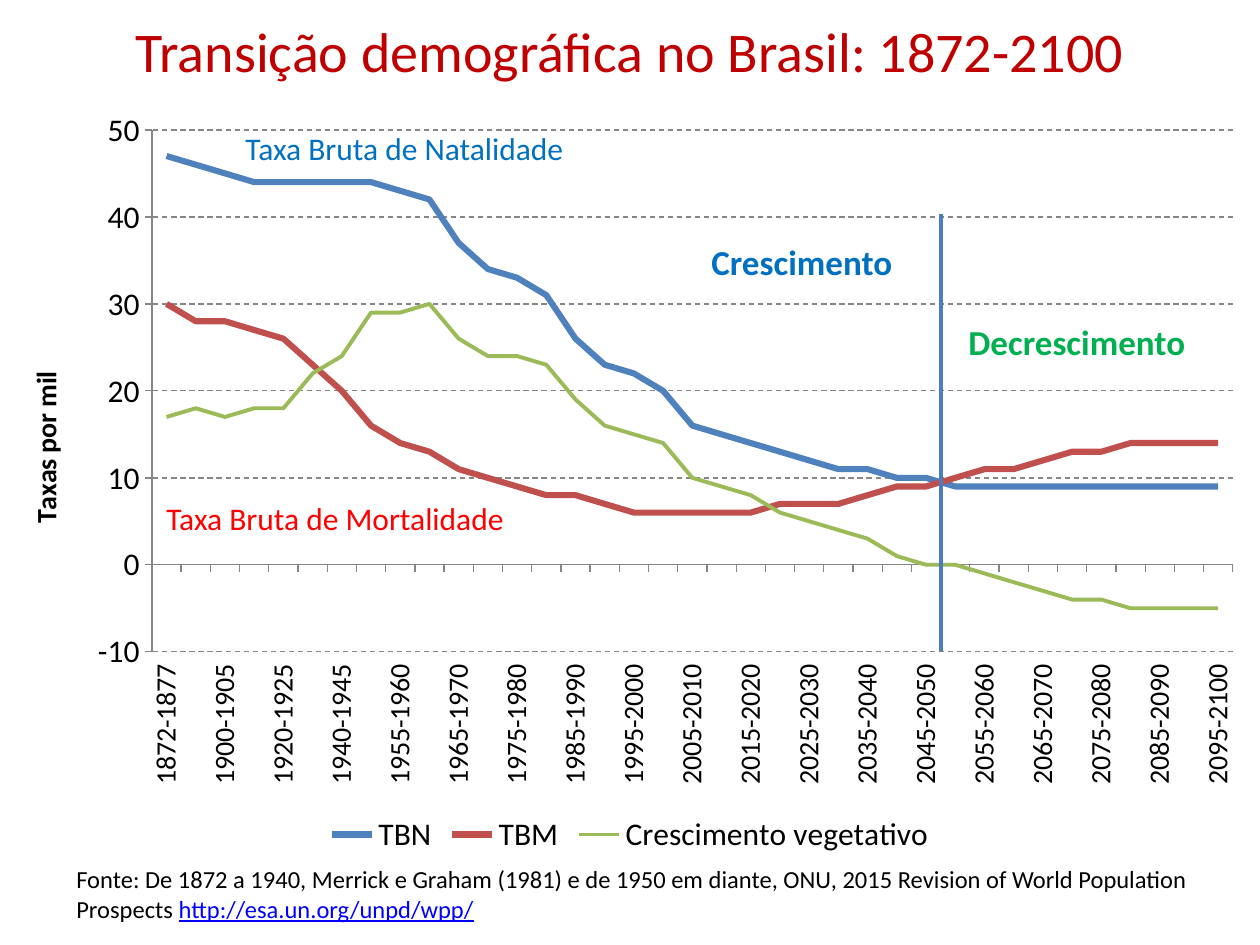
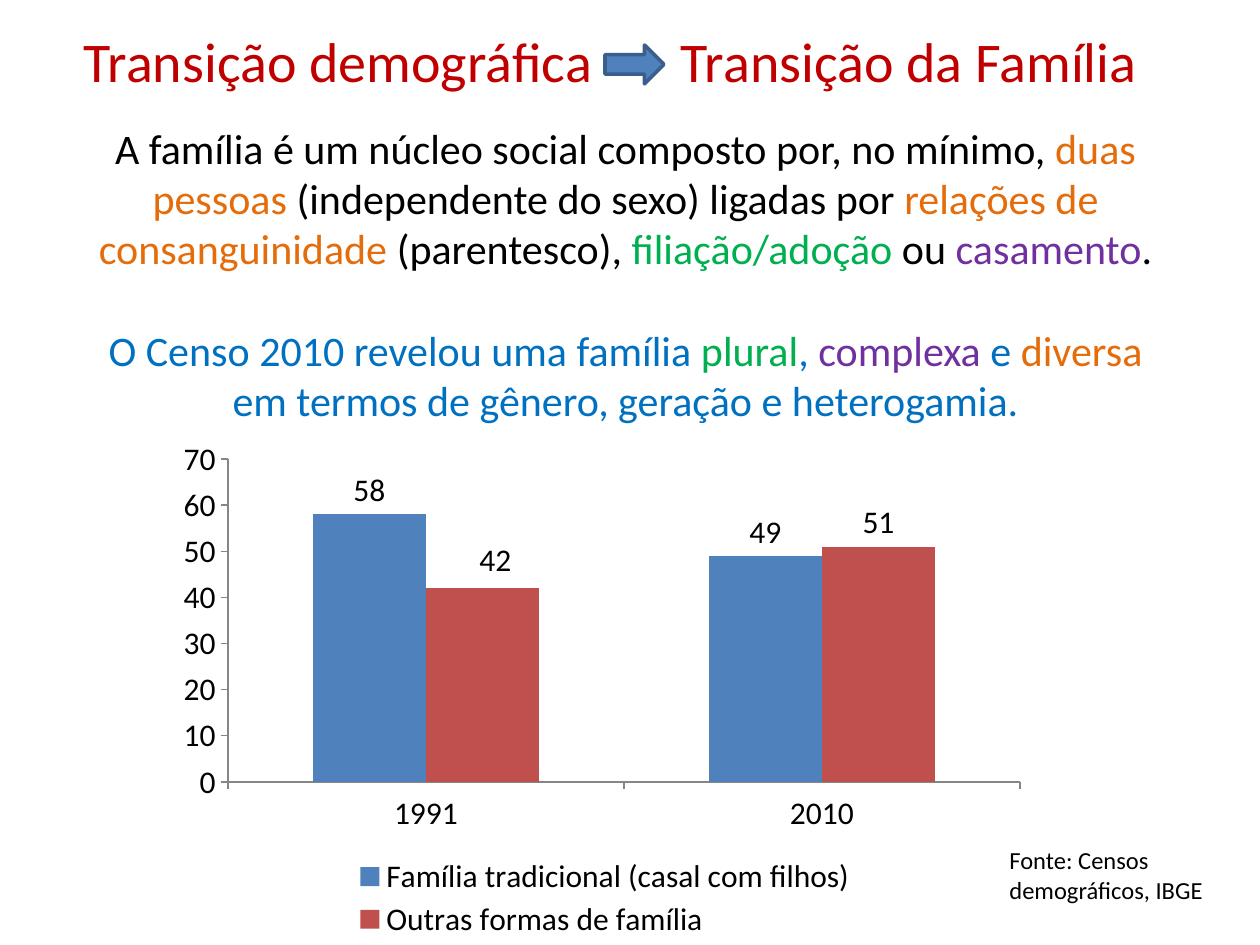
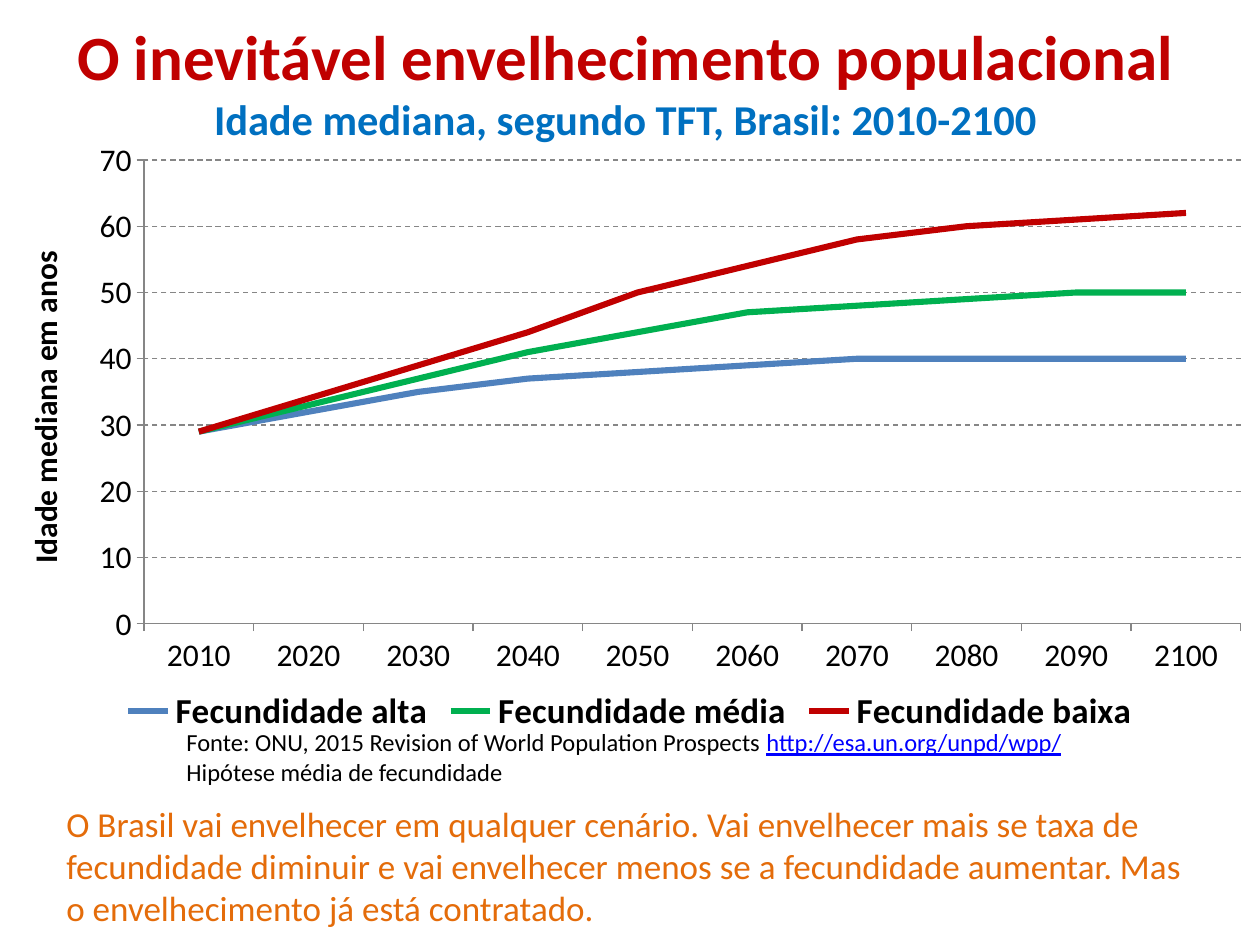
from lxml.etree import SubElement
from pptx import Presentation
from pptx.chart.data import CategoryChartData
from pptx.dml.color import RGBColor
from pptx.enum.chart import XL_CHART_TYPE, XL_LABEL_POSITION, XL_LEGEND_POSITION
from pptx.enum.chart import XL_TICK_LABEL_POSITION, XL_TICK_MARK
from pptx.enum.dml import MSO_LINE
from pptx.enum.shapes import MSO_CONNECTOR, MSO_SHAPE
from pptx.enum.text import MSO_ANCHOR, MSO_AUTO_SIZE, PP_ALIGN
from pptx.oxml import parse_xml
from pptx.oxml.ns import nsdecls, qn
from pptx.util import Emu, Pt

PX_PER_INCH = 126
FONT = "Calibri"
BLACK, RED, BLUE, GREEN = "000000", "C00000", "0070C0", "00B050"
ORANGE, PURPLE, LINK, GREY = "E46C0A", "7030A0", "0000FF", "868686"
SERIES_BLUE, SERIES_RED, SERIES_GREEN = "4F81BD", "C0504D", "9BBB59"
TITLE_SIZE, SOURCE_SIZE = 32, 14
SOURCE_URL = ("http://esa.un.org/unpd/wpp/", SOURCE_SIZE, LINK, "u")

PERIODS = ["1872-1877", "1890-1895", "1900-1905", "1910-1915", "1920-1925",
           "1930-1935", "1940-1945"]
PERIODS += [f"{year}-{year + 5}" for year in range(1950, 2100, 5)]
BIRTHS = [47, 46, 45, 44, 44, 44, 44, 44, 43, 42, 37, 34, 33, 31, 26, 23, 22, 20, 16,
          15, 14, 13, 12, 11, 11, 10, 10, 9, 9, 9, 9, 9, 9, 9, 9, 9, 9]
DEATHS = [30, 28, 28, 27, 26, 23, 20, 16, 14, 13, 11, 10, 9, 8, 8, 7, 6, 6, 6,
          6, 6, 7, 7, 7, 8, 9, 9, 10, 11, 11, 12, 13, 13, 14, 14, 14, 14]
GROWTH = [17, 18, 17, 18, 18, 22, 24, 29, 29, 30, 26, 24, 24, 23, 19, 16, 15, 14, 10,
          9, 8, 6, 5, 4, 3, 1, 0, 0, -1, -2, -3, -4, -4, -5, -5, -5, -5]


def px(length):
    """Turn a length in px into EMU."""
    return Emu(round(length * 914400 / PX_PER_INCH))


def rgb(colour):
    """Turn a hex string into a colour."""
    return RGBColor.from_string(colour)


def style_font(font, size, colour=BLACK, bold=False):
    """Give a font the deck's typeface with a size, colour and weight."""
    font.name, font.size, font.bold = FONT, Pt(size), bold
    font.color.rgb = rgb(colour)


def write(frame, paragraphs, align=PP_ALIGN.LEFT):
    """Fill a text frame with paragraphs of (text, size, colour, marks) runs."""
    for index, runs in enumerate(paragraphs):
        paragraph = frame.add_paragraph() if index else frame.paragraphs[0]
        paragraph.alignment = align
        for text, size, colour, *marks in runs:
            run = paragraph.add_run()
            run.text = text
            style_font(run.font, size, colour, "b" in marks)
            run.font.underline = "u" in marks


def add_slide(deck, box, paragraphs):
    """Add a title-only slide with its title placed and written."""
    slide = deck.slides.add_slide(deck.slide_layouts[5])
    heading = slide.shapes.title
    heading.left, heading.top, heading.width, heading.height = map(px, box)
    frame = heading.text_frame
    frame.auto_size, frame.vertical_anchor = MSO_AUTO_SIZE.NONE, MSO_ANCHOR.MIDDLE
    write(frame, paragraphs, PP_ALIGN.CENTER)
    return slide


def add_text(slide, box, paragraphs, wrap=True):
    """Add a text box that grows with its text."""
    frame = slide.shapes.add_textbox(*map(px, box)).text_frame
    frame.word_wrap = wrap
    frame.auto_size = MSO_AUTO_SIZE.SHAPE_TO_FIT_TEXT
    write(frame, paragraphs)
    return frame


def set_layout(parent, position, inner=False, **fractions):
    """Place a chart part by fractions of the chart's size."""
    for old in parent.findall(qn("c:layout")):
        parent.remove(old)
    target = '<c:layoutTarget val="inner"/>' if inner else ""
    modes = '<c:xMode val="edge"/><c:yMode val="edge"/>' if "w" in fractions else ""
    values = "".join(f'<c:{key} val="{value:.4f}"/>' for key, value in fractions.items())
    parent.insert(position, parse_xml(
        f'<c:layout {nsdecls("c")}><c:manualLayout>{target}{modes}{values}'
        "</c:manualLayout></c:layout>"))


def fractions_of(part, frame):
    """Express a slide box as fractions of a chart's box."""
    return {"x": (part[0] - frame[0]) / frame[2], "y": (part[1] - frame[1]) / frame[3],
            "w": part[2] / frame[2], "h": part[3] / frame[3]}


def style_axis(axis, size):
    """Give an axis its font, grey line and outside ticks."""
    style_font(axis.tick_labels.font, size)
    axis.major_tick_mark, axis.minor_tick_mark = XL_TICK_MARK.OUTSIDE, XL_TICK_MARK.NONE
    axis.format.line.color.rgb = rgb(GREY)
    axis.format.line.width = Pt(0.75)
    axis.has_major_gridlines = False


def add_chart(slide, kind, box, plot_box, categories, series, limits,
              category_size=18, legend_size=18, legend_bold=False):
    """Add a chart with its axes, plot area and bottom legend."""
    data = CategoryChartData()
    data.categories = categories
    for name, values, *_ in series:
        data.add_series(name, values)
    chart = slide.shapes.add_chart(kind, *map(px, box), data).chart
    chart.has_title = False
    style_font(chart.font, 18)
    style_axis(chart.category_axis, category_size)
    style_axis(chart.value_axis, 18)
    scale = chart.value_axis
    scale.minimum_scale, scale.maximum_scale = limits
    scale.major_unit = 10
    chart.has_legend = True
    chart.legend.position = XL_LEGEND_POSITION.BOTTOM
    chart.legend.include_in_layout = False
    style_font(chart.legend.font, legend_size, bold=legend_bold)
    chart.plots[0].vary_by_categories = False
    plot_area = chart._chartSpace.xpath("c:chart/c:plotArea")[0]
    set_layout(plot_area, 0, inner=True, **fractions_of(plot_box, box))
    return chart


def add_line_chart(slide, box, plot_box, categories, series, limits,
                   axis_title, axis_title_size, **sizes):
    """Add a line chart with dashed gridlines and a titled value axis."""
    chart = add_chart(slide, XL_CHART_TYPE.LINE, box, plot_box, categories, series,
                      limits, **sizes)
    scale = chart.value_axis
    scale.has_major_gridlines = True
    gridline = scale.major_gridlines.format.line
    gridline.color.rgb = rgb(GREY)
    gridline.width, gridline.dash_style = Pt(0.75), MSO_LINE.DASH
    write(scale.axis_title.text_frame,
          [[(axis_title, axis_title_size, BLACK, "b")]], PP_ALIGN.CENTER)
    for curve, (_, _, colour, width) in zip(chart.plots[0].series, series):
        curve.smooth = False
        curve.format.line.color.rgb = rgb(colour)
        curve.format.line.width = Pt(width)
    return chart


def add_column_chart(slide, box, plot_box, legend_box, categories, series, limits):
    """Add a clustered column chart with values above the columns."""
    chart = add_chart(slide, XL_CHART_TYPE.COLUMN_CLUSTERED, box, plot_box,
                      categories, series, limits)
    chart.plots[0].gap_width, chart.plots[0].overlap = 150, 0
    set_layout(chart.legend._element, 1, **fractions_of(legend_box, box))
    for columns, (_, _, colour) in zip(chart.plots[0].series, series):
        columns.format.fill.solid()
        columns.format.fill.fore_color.rgb = rgb(colour)
        columns.data_labels.show_value = True
        columns.data_labels.position = XL_LABEL_POSITION.OUTSIDE_END
        style_font(columns.data_labels.font, 18)
    return chart


def nudge_label(point, box, right, down):
    """Move one value label off its usual place."""
    label = point.data_label
    style_font(label.font, 18)
    label.position = XL_LABEL_POSITION.OUTSIDE_END
    element = label._dLbl
    set_layout(element, 1, x=right / box[2], y=down / box[3])


def add_divider(slide, x, top, bottom):
    """Add the vertical line between growth and decline."""
    divider = slide.shapes.add_connector(
        MSO_CONNECTOR.STRAIGHT, px(x), px(bottom), px(x), px(top))
    divider.line.color.rgb = rgb("4B7EBC")
    divider.line.width = Pt(2)
    SubElement(divider._element.spPr, qn("a:effectLst"))


def add_arrow(slide, box):
    """Add the block arrow between the two transitions."""
    arrow = slide.shapes.add_shape(MSO_SHAPE.RIGHT_ARROW, *map(px, box))
    arrow.shadow.inherit = False
    arrow.fill.solid()
    arrow.fill.fore_color.rgb = rgb(SERIES_BLUE)
    arrow.line.color.rgb = rgb("3A5F8C")
    arrow.line.width = Pt(2)


def add_split_heading(slide, box, inset, tab, before, after):
    """Add a heading in two parts, the second at a tab stop."""
    frame = add_text(slide, box, [[(f"{before}\t{after}", TITLE_SIZE, RED)]])
    frame.auto_size, frame.vertical_anchor = MSO_AUTO_SIZE.NONE, MSO_ANCHOR.MIDDLE
    frame.margin_left = px(inset)
    stops = SubElement(frame.paragraphs[0]._p.get_or_add_pPr(), qn("a:tabLst"))
    SubElement(stops, qn("a:tab"), pos=str(px(tab)), algn="l")


def build_transition(deck):
    """Build the slide on birth, death and growth rates."""
    slide = add_slide(deck, (63, 16, 1134, 68),
                      [[("Transição demográfica no Brasil: 1872-2100", TITLE_SIZE, RED)]])
    rates = [("TBN", BIRTHS, SERIES_BLUE, 3.5), ("TBM", DEATHS, SERIES_RED, 3.5),
             ("Crescimento vegetativo", GROWTH, SERIES_GREEN, 2.25)]
    chart = add_line_chart(slide, (0, 96, 1260, 764), (152, 130, 1081, 522), PERIODS,
                           rates, (-10, 50), "Taxas por mil", 16, category_size=16)
    periods = chart.category_axis
    periods.tick_label_position = XL_TICK_LABEL_POSITION.LOW
    axis = periods._element
    axis.find(qn("c:txPr")).find(qn("a:bodyPr")).set("rot", "-5400000")
    for tag, step in (("c:tickMarkSkip", "1"), ("c:tickLblSkip", "2")):
        skip = axis.makeelement(qn(tag), {"val": step})
        axis.find(qn("c:lblOffset")).addnext(skip)
    add_divider(slide, 941, 214, 651)
    for box, text, size, colour, *marks in (
            ((699, 234, 208, 55), "Crescimento", 20, BLUE, "b"),
            ((956, 314, 244, 55), "Decrescimento", 20, GREEN, "b"),
            ((233, 123, 346, 50), "Taxa Bruta de Natalidade", 18, BLUE),
            ((154, 493, 367, 50), "Taxa Bruta de Mortalidade", 18, "FF0000")):
        add_text(slide, box, [[(text, size, colour, *marks)]], wrap=False)
    add_text(slide, (64, 858, 1160, 72), [[
        ("Fonte: De 1872 a 1940, Merrick e Graham (1981) e de 1950 em diante, ONU, "
         "2015 Revision of World Population Prospects ", SOURCE_SIZE, BLACK),
        SOURCE_URL]])


def build_family(deck):
    """Build the slide on the changing family."""
    size = 24
    slide = add_slide(deck, (35, 125, 1181, 297), [
        [("A família é um núcleo social composto por, no mínimo, ", size, BLACK),
         ("duas pessoas", size, ORANGE),
         (" (independente do sexo) ligadas por ", size, BLACK),
         ("relações de consanguinidade ", size, ORANGE),
         ("(parentesco), ", size, BLACK), ("filiação/adoção", size, GREEN),
         (" ou ", size, BLACK), ("casamento", size, PURPLE), (".", size, BLACK)],
        [("O Censo 2010 revelou uma família ", size, BLUE), ("plural", size, GREEN),
         (", ", size, BLUE), ("complexa", size, PURPLE), (" e ", size, BLUE),
         ("diversa", size, ORANGE)],
        [("em termos de gênero, geração e heterogamia.", size, BLUE)]])
    slide.shapes.title.text_frame.paragraphs[1].space_before = Pt(29)
    add_split_heading(slide, (44, 16, 1134, 89), 40, 597,
                      "Transição demográfica", "Transição da Família")
    add_arrow(slide, (605, 45, 59, 39))
    add_text(slide, (997, 839, 233, 72),
             [[("Fonte: Censos demográficos, IBGE", SOURCE_SIZE, BLACK)]])
    box = (164, 433, 883, 512)
    families = [("Família tradicional (casal com filhos)", [58, 49], SERIES_BLUE),
                ("Outras formas de família", [42, 51], SERIES_RED)]
    chart = add_column_chart(slide, box, (228, 459, 792, 323), (350, 853, 510, 90),
                             ["1991", "2010"], families, (0, 70))
    nudge_label(chart.plots[0].series[1].points[0], box, 13, -4)


def build_ageing(deck):
    """Build the slide on the median age."""
    slide = add_slide(deck, (35, 16, 1181, 129), [
        [("O inevitável envelhecimento populacional", 36, RED, "b")],
        [("Idade mediana, segundo TFT, Brasil: 2010-2100", 24.3, BLUE, "b")]])
    scenarios = [
        ("Fecundidade alta", [29, 32, 35, 37, 38, 39, 40, 40, 40, 40], SERIES_BLUE, 3.5),
        ("Fecundidade média", [29, 33, 37, 41, 44, 47, 48, 49, 50, 50], GREEN, 3.5),
        ("Fecundidade baixa", [29, 34, 39, 44, 50, 54, 58, 60, 61, 62], RED, 3.5)]
    add_line_chart(slide, (0, 135, 1260, 605), (144, 160, 1097, 464),
                   [str(year) for year in range(2010, 2101, 10)], scenarios, (0, 70),
                   "Idade mediana em anos", 18, legend_size=20, legend_bold=True)
    add_text(slide, (54, 796, 1160, 140), [[
        ("O Brasil vai envelhecer em qualquer cenário. Vai envelhecer mais se taxa de "
         "fecundidade diminuir e vai envelhecer menos se a fecundidade aumentar. "
         "Mas o envelhecimento já está contratado.", 20, ORANGE)]])
    add_text(slide, (174, 721, 1002, 72), [
        [("Fonte: ONU, 2015 Revision of World Population Prospects ", SOURCE_SIZE, BLACK),
         SOURCE_URL],
        [("Hipótese média de fecundidade", SOURCE_SIZE, BLACK)]])


def main():
    """Build the three slides and save them."""
    deck = Presentation()
    deck.slide_width, deck.slide_height = px(1260), px(945)
    build_transition(deck)
    build_family(deck)
    build_ageing(deck)
    deck.save("out.pptx")


if __name__ == "__main__":
    main()
